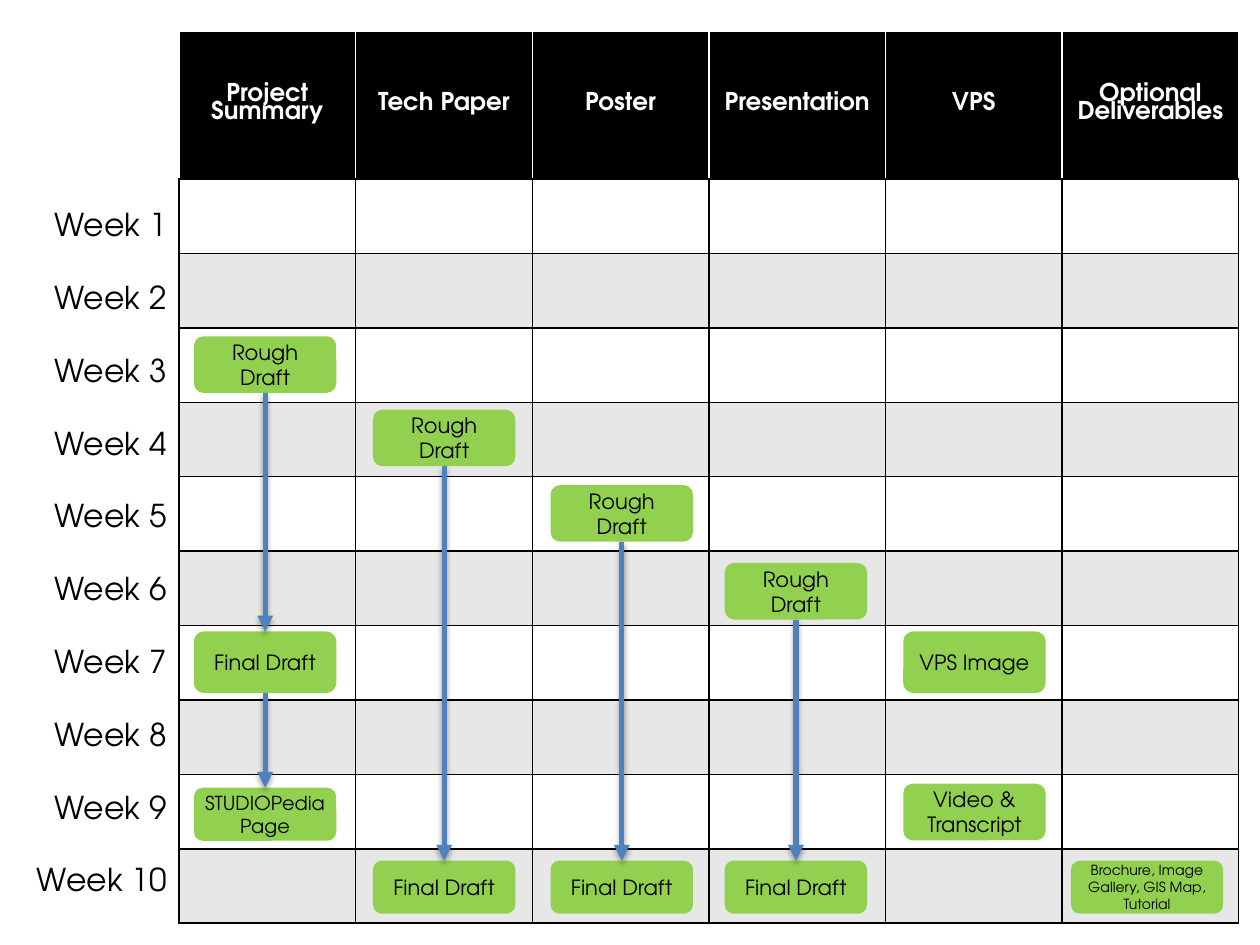
"""Build a ten-week schedule of project deliverables with draft milestones."""
from lxml import etree
from pptx import Presentation
from pptx.dml.color import RGBColor
from pptx.enum import shapes, text
from pptx.oxml import ns
from pptx.util import Cm, Pt

FONT = "TeX Gyre Adventor"
BLACK = RGBColor(0x00, 0x00, 0x00)
WHITE = RGBColor(0xFF, 0xFF, 0xFF)
GREY = RGBColor(0xE7, 0xE7, 0xE7)
GREEN = RGBColor(0x92, 0xD0, 0x50)
BLUE = RGBColor(0x4F, 0x81, 0xBD)

HEADERS = ["Project Summary", "Tech Paper", "Poster", "Presentation", "VPS",
           "Optional Deliverables"]
WEEKS = [f"Week {n}" for n in range(1, 11)]
TABLE_LEFT, TABLE_TOP, COL_W, HEAD_H, ROW_H = 3.61, 0.64, 3.56, 2.97, 1.5

BOX_LEFTS = [3.91, 7.52, 11.1, 14.61, 18.21, 21.59]
BOX_W, WIDE_BOX_W = 2.87, 3.07
# key: (column, top, height, wording, size)
MILESTONES = {
    "summary rough": (0, 6.78, 1.14, "Rough Draft", 12),
    "summary final": (0, 12.73, 1.24, "Final Draft", 12),
    "summary page": (0, 15.88, 1.07, "STUDIOPedia Page", 11),
    "paper rough": (1, 8.26, 1.14, "Rough Draft", 12),
    "paper final": (1, 17.35, 1.07, "Final Draft", 12),
    "poster rough": (2, 9.78, 1.14, "Rough Draft", 12),
    "poster final": (2, 17.35, 1.07, "Final Draft", 12),
    "talk rough": (3, 11.35, 1.14, "Rough Draft", 12),
    "talk final": (3, 17.35, 1.07, "Final Draft", 12),
    "vps image": (4, 12.73, 1.24, "VPS Image", 12),
    "vps video": (4, 15.8, 1.14, "Video & Transcript", 12),
    "optional": (5, 17.35, 1.07, "Brochure, Image Gallery, GIS Map, Tutorial", 8),
}
FLOWS = [("summary rough", "summary final"), ("summary final", "summary page"),
         ("paper rough", "paper final"), ("poster rough", "poster final"),
         ("talk rough", "talk final")]


def style(p, size, color, align, bold=False):
    p.alignment = align
    for r in p.runs:
        r.font.name, r.font.size, r.font.bold = FONT, Pt(size), bold
        r.font.color.rgb = color


def sub(parent, tag, **attrs):
    return etree.SubElement(parent, ns.qn(tag), attrs)


def format_cell(cell, fill, side_color):
    tc_pr = cell._tc.get_or_add_tcPr()
    for side in "LRTB":
        ln = sub(tc_pr, f"a:ln{side}", w=str(Pt(1)))
        color = BLACK if side == "B" else side_color
        sub(sub(ln, "a:solidFill"), "a:srgbClr", val=str(color))
    cell.fill.solid()
    cell.fill.fore_color.rgb = fill


def add_schedule(s):
    n_rows, n_cols = len(WEEKS) + 1, len(HEADERS)
    table = s.shapes.add_table(
        n_rows, n_cols, Cm(TABLE_LEFT), Cm(TABLE_TOP), Cm(COL_W * n_cols),
        Cm(HEAD_H + ROW_H * len(WEEKS))).table
    table.first_row = table.horz_banding = False
    for col in table.columns:
        col.width = Cm(COL_W)
    for i, row in enumerate(table.rows):
        row.height = Cm(ROW_H if i else HEAD_H)
        for cell, header in zip(row.cells, HEADERS):
            if i:
                format_cell(cell, WHITE if i % 2 else GREY, BLACK)
                continue
            format_cell(cell, BLACK, WHITE)
            cell.vertical_anchor = text.MSO_ANCHOR.MIDDLE
            cell.text_frame.text = header
            p = cell.text_frame.paragraphs[0]
            p.line_spacing = 0.8
            style(p, 14, WHITE, text.PP_ALIGN.CENTER, bold=True)


def add_weeks(s):
    tf = s.shapes.add_textbox(Cm(0.43), Cm(4.01), Cm(3.18), Cm(14.35)).text_frame
    tf.word_wrap = False
    tf.auto_size = text.MSO_AUTO_SIZE.SHAPE_TO_FIT_TEXT
    tf.text = "\n".join(WEEKS)
    for p in tf.paragraphs:
        p.space_after = Pt(20)
        style(p, 18, BLACK, text.PP_ALIGN.RIGHT)


def add_milestone(s, col, top, height, wording, size):
    width = WIDE_BOX_W if col == len(HEADERS) - 1 else BOX_W
    sp = s.shapes.add_shape(shapes.MSO_SHAPE.ROUNDED_RECTANGLE, Cm(BOX_LEFTS[col]),
                            Cm(top), Cm(width), Cm(height))
    sp.shadow.inherit = False
    sp.fill.solid()
    sp.fill.fore_color.rgb = GREEN
    sp.line.fill.background()
    tf = sp.text_frame
    tf.word_wrap = True
    tf.vertical_anchor = text.MSO_ANCHOR.MIDDLE
    if size == 11:
        tf.margin_left = tf.margin_right = 0
    tf.text = wording
    style(tf.paragraphs[0], size, BLACK, text.PP_ALIGN.CENTER)
    return sp


def add_arrow(s, start, end):
    arrow = s.shapes.add_connector(shapes.MSO_CONNECTOR.STRAIGHT, 0, 0, 0, 0)
    arrow.begin_connect(start, 2)
    arrow.end_connect(end, 0)
    arrow.line.color.rgb = BLUE
    arrow.line.width = Pt(3)
    sub(arrow.line._get_or_add_ln(), "a:tailEnd", type="triangle")
    shadow = sub(sub(arrow._element.spPr, "a:effectLst"), "a:outerShdw",
                 blurRad=str(Pt(3.1)), dist=str(Pt(1.8)), dir="5400000",
                 rotWithShape="0")
    sub(sub(shadow, "a:srgbClr", val=str(BLACK)), "a:alpha", val="35000")


def main():
    prs = Presentation()
    prs.slide_width, prs.slide_height = Cm(25.4), Cm(19.05)
    s = prs.slides.add_slide(prs.slide_layouts[6])
    add_schedule(s)
    add_weeks(s)
    boxes = {key: add_milestone(s, *spec) for key, spec in MILESTONES.items()}
    for start, end in FLOWS:
        add_arrow(s, boxes[start], boxes[end])
    prs.save("out.pptx")


if __name__ == "__main__":
    main()
